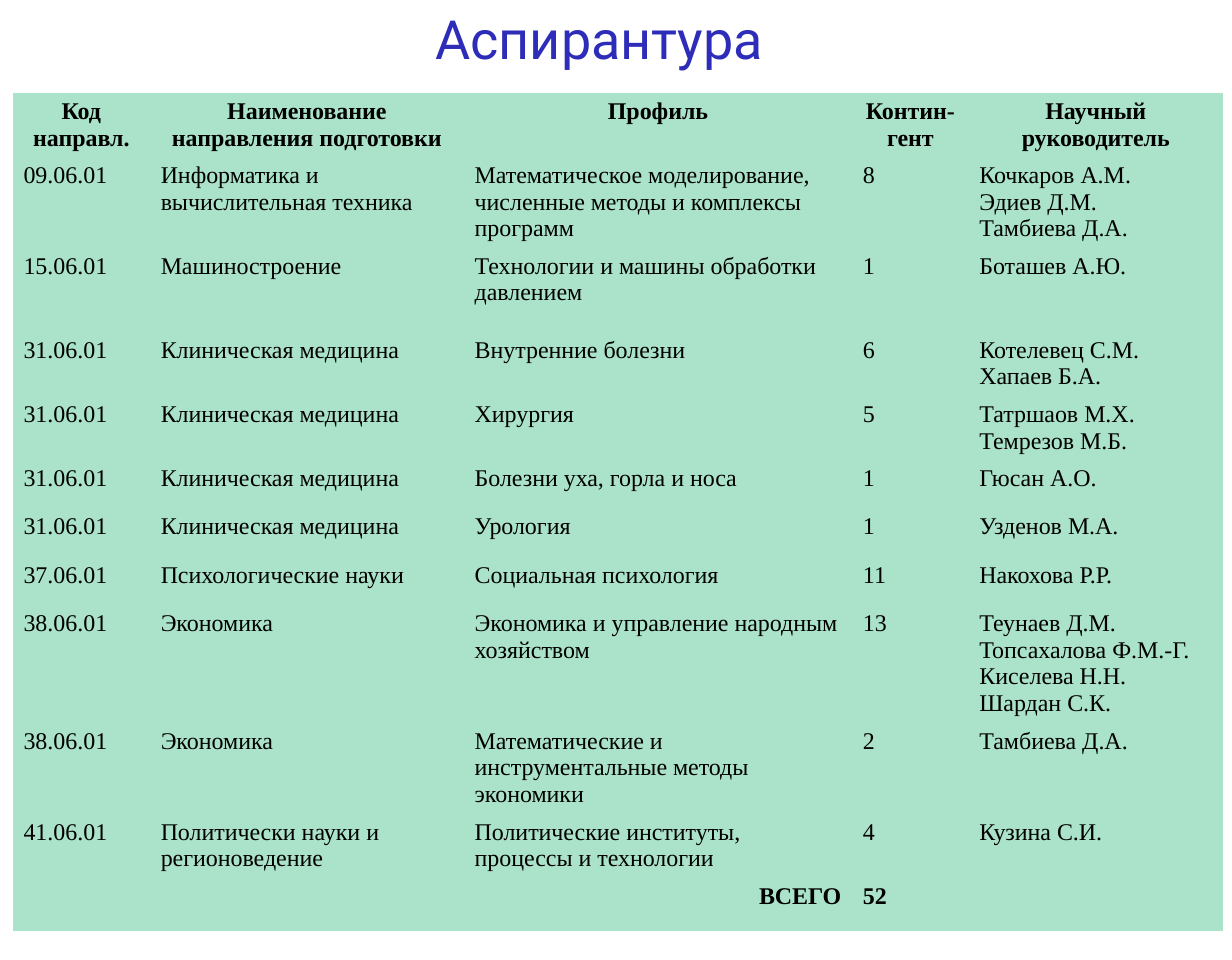
from pptx import Presentation
from pptx.dml.color import RGBColor as RGB
from pptx.enum.text import MSO_ANCHOR as Anchor, PP_ALIGN as Align
from pptx.oxml.ns import qn
from pptx.util import Cm, Pt
from lxml.etree import SubElement

COLORS = {"title": "2D2DB9", "text": "000000", "cell": "AAE2CA"}
WIDTHS = [3.23, 7.39, 9.14, 2.74, 5.99]
HEIGHTS = [1.5, 2.13, 1.98, 1.5, 1.5, 1.14, 1.14, 1.14, 2.77, 2.13, 1.5, 1.27]
CLINIC = "Клиническая медицина"
ROWS = [
    ["Код направл.", "Наименование направления подготовки", "Профиль",
     "Контин-гент", "Научный руководитель"],
    ["09.06.01", "Информатика и вычислительная техника",
     "Математическое моделирование, численные методы и комплексы программ",
     "8", "Кочкаров А.М.\nЭдиев Д.М.\nТамбиева Д.А."],
    ["15.06.01", "Машиностроение", "Технологии и машины обработки давлением",
     "1", "Боташев А.Ю."],
    ["31.06.01", CLINIC, "Внутренние болезни", "6", "Котелевец С.М.\nХапаев Б.А."],
    ["31.06.01", CLINIC, "Хирургия", "5", "Татршаов М.Х.\nТемрезов М.Б."],
    ["31.06.01", CLINIC, "Болезни уха, горла и носа", "1", "Гюсан А.О."],
    ["31.06.01", CLINIC, "Урология", "1", "Узденов М.А."],
    ["37.06.01", "Психологические науки", "Социальная психология",
     "11", "Накохова Р.Р."],
    ["38.06.01", "Экономика", "Экономика и управление народным хозяйством",
     "13", "Теунаев Д.М.\nТопсахалова Ф.М.-Г.\nКиселева Н.Н.\nШардан С.К."],
    ["38.06.01", "Экономика", "Математические и инструментальные методы экономики",
     "2", "Тамбиева Д.А."],
    ["41.06.01", "Политически науки и регионоведение",
     "Политические институты, процессы и технологии", "4", "Кузина С.И."],
    ["", "", "ВСЕГО", "52", ""],
]


def write(frame, text, size=16, name="Times New Roman", color="text",
          bold=False, align=Align.LEFT):
    frame.text = text
    for para in frame.paragraphs:
        para.alignment = align
        font = para.font
        font.size, font.name, font.bold = Pt(size), name, bold
        font.color.rgb = RGB.from_string(COLORS[color])


def add_title(slide, text):
    box = slide.shapes.add_textbox(Cm(2.11), Cm(0.2), Cm(24), Cm(1.4))
    frame = box.text_frame
    frame.word_wrap = True
    frame.vertical_anchor = Anchor.MIDDLE
    frame.margin_left = frame.margin_right = Cm(0)
    frame.margin_top = frame.margin_bottom = Cm(0)
    write(frame, text, size=36, name="Roboto", color="title", align=Align.CENTER)


def paint(cell):
    """Hide the borders of a cell and fill it."""
    props = cell._tc.get_or_add_tcPr()
    for side in ("lnL", "lnR", "lnT", "lnB"):
        line = SubElement(props, qn(f"a:{side}"), w="0")
        SubElement(line, qn("a:noFill"))
    cell.fill.solid()
    cell.fill.fore_color.rgb = RGB.from_string(COLORS["cell"])


def add_grid(slide):
    last = len(ROWS) - 1
    grid = slide.shapes.add_table(
        len(ROWS), len(WIDTHS), Cm(0.3), Cm(2.18),
        Cm(sum(WIDTHS)), Cm(sum(HEIGHTS))).table
    grid.horz_banding = False
    for col, width in zip(grid.columns, WIDTHS):
        col.width = Cm(width)
    for row, height in zip(grid.rows, HEIGHTS):
        row.height = Cm(height)
    for r, row in enumerate(ROWS):
        for c, text in enumerate(row):
            align = Align.LEFT
            if r == 0:
                align = Align.CENTER
            elif text == "ВСЕГО":
                align = Align.RIGHT
            cell = grid.cell(r, c)
            paint(cell)
            write(cell.text_frame, text, bold=r in (0, last), align=align)


def main():
    deck = Presentation()
    deck.slide_width, deck.slide_height = Cm(29), Cm(22.6)
    slide = deck.slides.add_slide(deck.slide_layouts[6])
    add_grid(slide)
    add_title(slide, "Аспирантура")
    deck.save("out.pptx")


if __name__ == "__main__":
    main()
